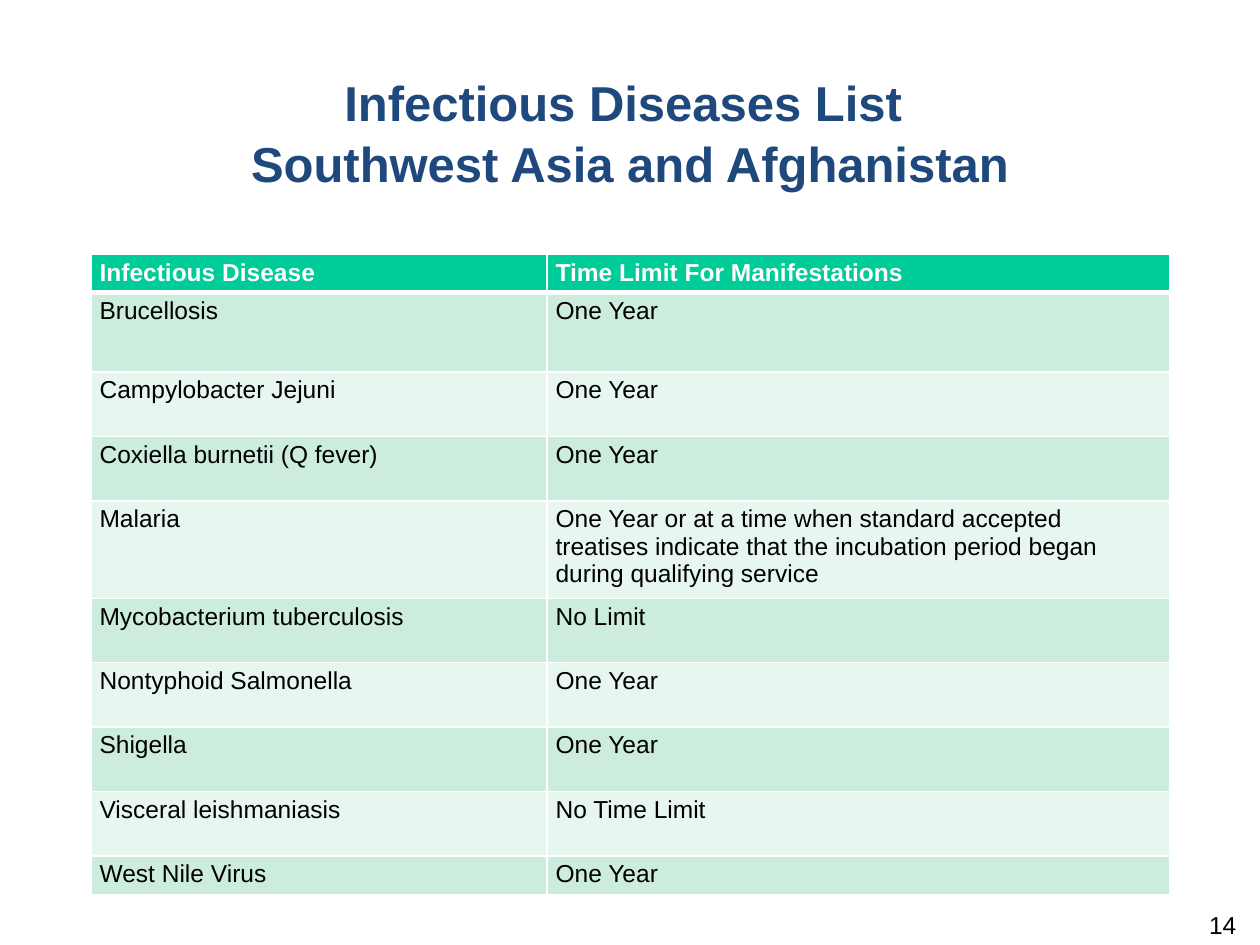
from dataclasses import dataclass

from lxml.etree import SubElement
from pptx import Presentation
from pptx.dml.color import RGBColor
from pptx.enum.text import MSO_ANCHOR, PP_ALIGN
from pptx.oxml.ns import qn
from pptx.util import Pt


@dataclass(frozen=True)
class Theme:
    font: str = "Arial"
    title: str = "1F497D"
    ink: str = "000000"
    white: str = "FFFFFF"
    header: str = "00CC99"
    bands: tuple = ("CCECDE", "E7F6EF")
    title_size: int = 28
    body_size: int = 14


theme = Theme()


def add_run(paragraph, text, size, color, bold=False):
    run = paragraph.add_run()
    run.text = text
    run.font.name = theme.font
    run.font.size = Pt(size)
    run.font.bold = bold
    run.font.color.rgb = RGBColor.from_string(color)


def add_border(cell, side, width):
    line = SubElement(cell._tc.get_or_add_tcPr(), qn(f"a:{side}"), w=str(Pt(width)))
    fill = SubElement(line, qn("a:solidFill"))
    SubElement(fill, qn("a:srgbClr"), val=theme.white)


prs = Presentation()
prs.slide_width, prs.slide_height = Pt(720), Pt(540)
slide = prs.slides.add_slide(prs.slide_layouts[6])

# Title
title = slide.shapes.add_textbox(Pt(0), Pt(34.5), Pt(720), Pt(95)).text_frame
title.word_wrap = True
title.vertical_anchor = MSO_ANCHOR.TOP
title.margin_top = Pt(5)
heading = title.paragraphs[0]
heading.alignment = PP_ALIGN.CENTER
heading.line_spacing = 1.05
add_run(heading, "Infectious Diseases List ", theme.title_size, theme.title, True)
heading.add_line_break()
add_run(heading, "Southwest Asia and Afghanistan", theme.title_size, theme.title, True)

# Disease table: name, time limit, row height
rows = [
    ("Infectious Disease", "Time Limit For Manifestations", 20.3),
    ("Brucellosis", "One Year", 45.4),
    ("Campylobacter Jejuni", "One Year", 36.8),
    ("Coxiella burnetii (Q fever)", "One Year", 36.8),
    ("Malaria", "One Year or at a time when standard accepted treatises indicate "
     "that the incubation period began during qualifying service", 52.6),
    ("Mycobacterium tuberculosis", "No Limit", 36.8),
    ("Nontyphoid Salmonella", "One Year", 36.8),
    ("Shigella", "One Year", 36.8),
    ("Visceral leishmaniasis", "No Time Limit", 36.8),
    ("West Nile Virus", "One Year", 20.3),
]
column_widths = (260.6, 355.7)
diseases = slide.shapes.add_table(
    len(rows), len(column_widths), Pt(51.9), Pt(145.3),
    Pt(sum(column_widths)), Pt(sum(row[2] for row in rows))).table
for column, width in zip(diseases.columns, column_widths):
    column.width = Pt(width)

for r, (disease, limit, height) in enumerate(rows):
    diseases.rows[r].height = Pt(height)
    is_header = r == 0
    band = theme.header if is_header else theme.bands[(r - 1) % 2]
    for c, text in enumerate((disease, limit)):
        cell = diseases.cell(r, c)
        cell.margin_left = cell.margin_right = Pt(5)
        cell.margin_top = cell.margin_bottom = Pt(2.6)
        # Borders come before the fill in the cell properties
        for side, width in (("lnL", 1), ("lnR", 1), ("lnT", 3 if r == 1 else 1),
                            ("lnB", 3 if is_header else 1)):
            add_border(cell, side, width)
        cell.fill.solid()
        cell.fill.fore_color.rgb = RGBColor.from_string(band)
        add_run(cell.text_frame.paragraphs[0], text, theme.body_size,
                theme.white if is_header else theme.ink, is_header)

# Page number
page = slide.shapes.add_textbox(Pt(545.8), Pt(520), Pt(167.8), Pt(28.8)).text_frame
page.word_wrap = True
page.margin_top = Pt(0)
page.paragraphs[0].alignment = PP_ALIGN.RIGHT
add_run(page.paragraphs[0], "14", theme.body_size, theme.ink)

prs.save("out.pptx")
